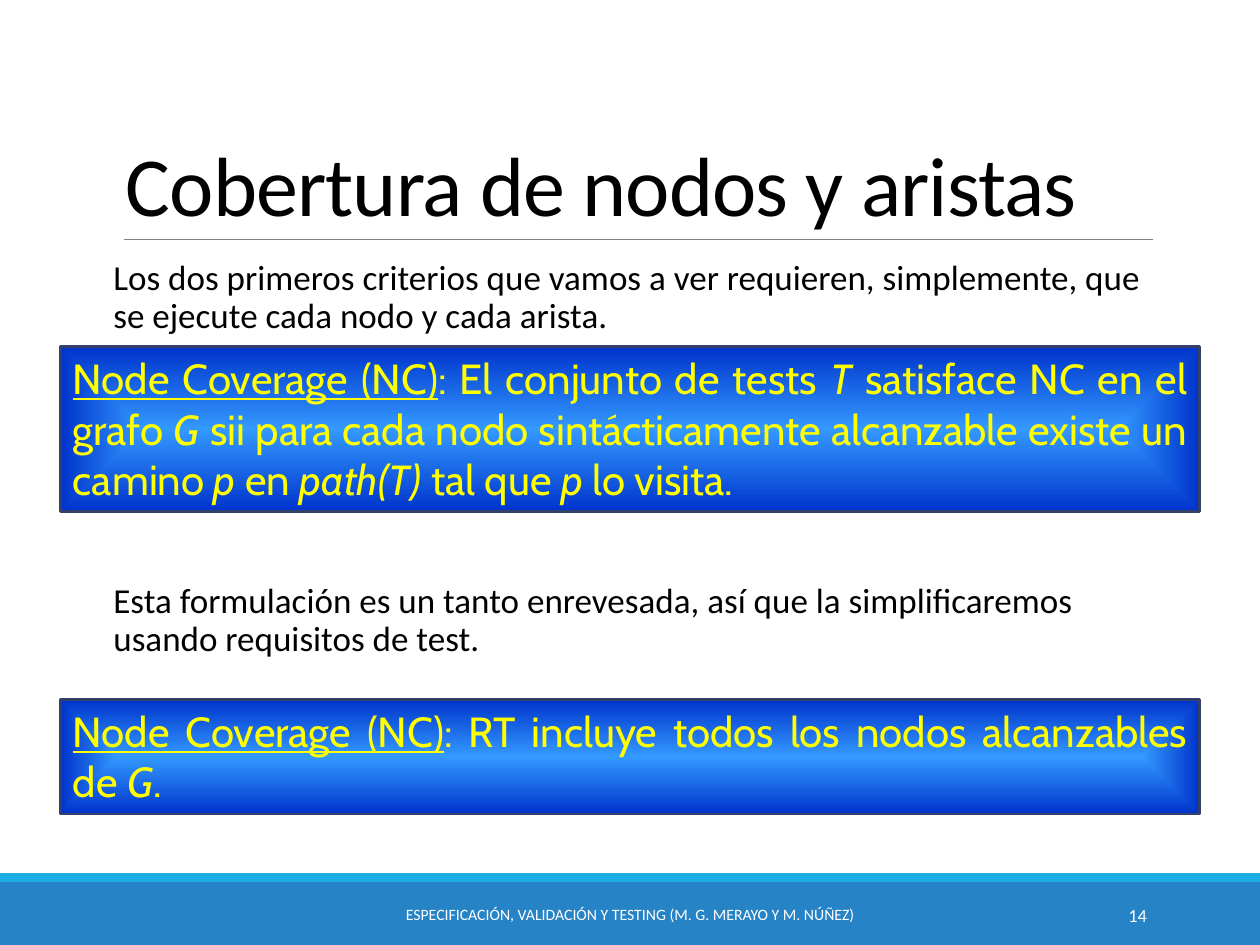
from dataclasses import dataclass

from lxml import etree
from pptx import Presentation
from pptx.dml.color import RGBColor
from pptx.enum import shapes, text
from pptx.oxml.ns import qn
from pptx.util import Pt

ALIGN = text.PP_ALIGN
ANCHOR = text.MSO_ANCHOR
BLACK, WHITE, YELLOW = "000000", "FFFFFF", "FFFF00"


@dataclass
class Box:
    left: float
    top: float
    width: float
    height: float

    def pts(self) -> tuple:
        return Pt(self.left), Pt(self.top), Pt(self.width), Pt(self.height)


@dataclass
class Run:
    text: str
    style: str = ""  # "u" underlined, "i" italic


@dataclass
class Rule:
    """A highlighted definition."""
    box: Box
    runs: list


def color(code: str) -> RGBColor:
    return RGBColor.from_string(code)


def write(shape, runs, size=20, font="Calibri", ink=BLACK, align=ALIGN.LEFT,
          anchor=ANCHOR.TOP, lines=1.0, side=7.2, track=0) -> None:
    """Fill a shape with one paragraph; runs is a string or a list of Run."""
    frame = shape.text_frame
    frame.word_wrap = True
    frame.vertical_anchor = anchor
    frame.margin_left = frame.margin_right = Pt(side)
    frame.margin_top = frame.margin_bottom = Pt(3.6)
    para = frame.paragraphs[0]
    para.alignment = align
    para.line_spacing = lines
    for item in [Run(runs)] if isinstance(runs, str) else runs:
        run = para.add_run()
        run.text = item.text
        face = run.font
        face.name, face.size = font, Pt(size)
        face.color.rgb = color(ink)
        face.underline = "u" in item.style
        face.italic = "i" in item.style
        if track:
            run._r.get_or_add_rPr().set("spc", str(int(track * 100)))


def label(slide, box: Box, words: str, **form) -> None:
    write(slide.shapes.add_textbox(*box.pts()), words, **form)


def rect(slide, box: Box):
    shape = slide.shapes.add_shape(shapes.MSO_SHAPE.RECTANGLE, *box.pts())
    shape.shadow.inherit = False
    return shape


def band(slide, box: Box, fill: str) -> None:
    shape = rect(slide, box)
    shape.fill.solid()
    shape.fill.fore_color.rgb = color(fill)
    shape.line.fill.background()


def glow(shape, inner: str, outer: str) -> None:
    """Fill with a gradient that spreads from the centre to the edges."""
    shape.fill.gradient()
    for stop, code, place in zip(shape.fill.gradient_stops, (inner, outer), (0, 1)):
        stop.color.rgb = color(code)
        stop.position = place
    grad = shape._element.spPr.find(qn("a:gradFill"))
    lin = grad.find(qn("a:lin"))
    way = etree.Element(qn("a:path"), path="shape")
    etree.SubElement(way, qn("a:fillToRect"), dict.fromkeys("ltrb", "50000"))
    grad.replace(lin, way)


def panel(slide, rule: Rule) -> None:
    shape = rect(slide, rule.box)
    glow(shape, "3399FF", "0033CC")
    shape.line.color.rgb = color("344068")
    shape.line.width = Pt(1.5)
    write(shape, rule.runs, size=24, font="Cabin", ink=YELLOW, align=ALIGN.JUSTIFY)


def divider(slide, left: float, right: float, top: float) -> None:
    line = slide.shapes.add_connector(
        shapes.MSO_CONNECTOR.STRAIGHT, Pt(left), Pt(top), Pt(right), Pt(top))
    line.line.color.rgb = color("808080")
    line.line.width = Pt(0.5)
    etree.SubElement(line._element.spPr, qn("a:effectLst"))


HEAD = Run("Node Coverage (NC)", "u")
RULES = [
    Rule(Box(34.6, 198, 651, 94.3), [
        HEAD, Run(": El conjunto de tests "), Run("T", "i"),
        Run(" satisface NC en el grafo "), Run("G ", "i"),
        Run("sii para cada nodo sintácticamente alcanzable existe un camino "),
        Run("p", "i"), Run(" en "), Run("path(T)", "i"), Run(" tal que "),
        Run("p", "i"), Run(" lo visita.")]),
    Rule(Box(34.6, 399.6, 651, 65.5), [
        HEAD, Run(": RT incluye todos los nodos alcanzables de "),
        Run("G", "i"), Run(".")]),
]
NOTES = [
    (Box(64.8, 145.4, 594, 50), "Los dos primeros criterios que vamos a ver "
     "requieren, simplemente, que se ejecute cada nodo y cada arista."),
    (Box(64.8, 329.8, 594, 61.2), "Esta formulación es un tanto enrevesada, "
     "así que la simplificaremos usando requisitos de test."),
]


def main() -> None:
    deck = Presentation()
    deck.slide_width, deck.slide_height = Pt(720), Pt(540)
    slide = deck.slides.add_slide(deck.slide_layouts[6])

    band(slide, Box(0, 504, 720, 36), "2683C6")
    band(slide, Box(0, 499, 720, 5), "1CADE4")
    divider(slide, 70.6, 658.8, 136.8)
    label(slide, Box(64.8, 22.3, 594, 114.5), "Cobertura de nodos y aristas",
          size=48, anchor=ANCHOR.BOTTOM, lines=0.85, track=-0.5)
    for box, words in NOTES:
        label(slide, box, words, lines=0.9, side=0)
    for rule in RULES:
        panel(slide, rule)
    label(slide, Box(217.4, 508.3, 285.1, 28.8),
          "ESPECIFICACIÓN, VALIDACIÓN Y TESTING (M. G. MERAYO Y M. NÚÑEZ)",
          size=9, ink=WHITE, align=ALIGN.CENTER, anchor=ANCHOR.MIDDLE)
    label(slide, Box(584.6, 508.3, 77.8, 28.8), "14",
          size=10.5, ink=WHITE, align=ALIGN.RIGHT, anchor=ANCHOR.MIDDLE)

    deck.save("out.pptx")


if __name__ == "__main__":
    main()
